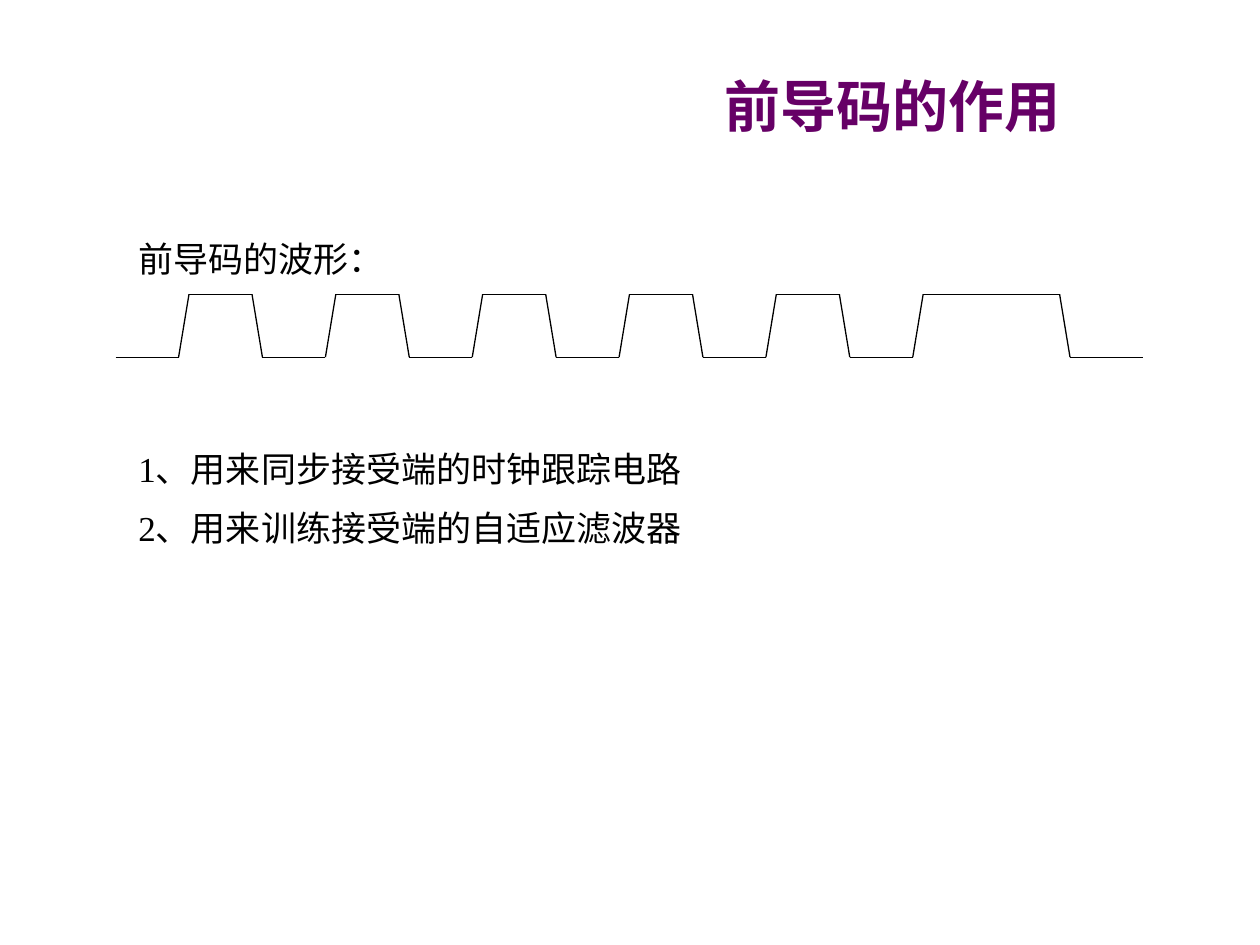
from itertools import pairwise

from lxml import etree
from pptx import Presentation
from pptx.dml.color import RGBColor as RGB
from pptx.enum.shapes import MSO_CONNECTOR as CONN
from pptx.enum.text import MSO_ANCHOR as ANCHOR, PP_ALIGN as ALIGN
from pptx.oxml.ns import qn
from pptx.util import Cm, Pt

COLORS = {"title": "660066", "text": "000000", "line": "000000", "paper": "FFFFFF"}
FONT = "Times New Roman"


def format_run(r, size, color, bold=False):
    r.font.name = FONT
    r.font.size = Pt(size)
    r.font.bold = bold
    r.font.color.rgb = RGB.from_string(COLORS[color])


def add_text(left, top, width, height, lines, wrap):
    tf = s.shapes.add_textbox(Cm(left), Cm(top), Cm(width), Cm(height)).text_frame
    tf.word_wrap = wrap
    tf.text = "\n".join(lines)
    for i, p in enumerate(tf.paragraphs):
        p.space_before = Pt(10 if i else 0)
        format_run(p.runs[0], 20, "text")


prs = Presentation()
prs.slide_width, prs.slide_height = Cm(25.4), Cm(19.05)
s = prs.slides.add_slide(prs.slide_layouts[5])

# Title
title = s.shapes.title
title.left, title.top, title.width, title.height = Cm(12.28), Cm(1.27), Cm(11.43), Cm(1.69)
title.fill.solid()
title.fill.fore_color.rgb = RGB.from_string(COLORS["paper"])
tf = title.text_frame
tf.text = "前导码的作用"
tf.vertical_anchor = ANCHOR.MIDDLE
tf.paragraphs[0].alignment = ALIGN.CENTER
format_run(tf.paragraphs[0].runs[0], 32, "title", bold=True)

# Numbered uses
add_text(2.54, 8.89, 15.03, 2.36,
         ["1、用来同步接受端的时钟跟踪电路", "2、用来训练接受端的自适应滤波器"], True)

# Waveform: five equal pulses, then one long pulse
HIGH, LOW = 5.93, 7.2
FLAT, LONG_FLAT, SLOPE = 1.27, 1.48, 0.21
pulse = [(FLAT, LOW), (SLOPE, HIGH), (FLAT, HIGH), (SLOPE, LOW)]
last_pulse = [(FLAT, LOW), (SLOPE, HIGH), (LONG_FLAT, HIGH), (FLAT, HIGH),
              (SLOPE, LOW), (LONG_FLAT, LOW)]
points = [(2.33, LOW)]
for dx, y in pulse * 5 + last_pulse:
    points.append((points[-1][0] + dx, y))

for (x1, y1), (x2, y2) in pairwise(points):
    line = s.shapes.add_connector(CONN.STRAIGHT, Cm(x1), Cm(y1), Cm(x2), Cm(y2))
    line.line.color.rgb = RGB.from_string(COLORS["line"])
    line.line.width = Pt(0.75)
    etree.SubElement(line._element.spPr, qn("a:effectLst"))

# Waveform label
add_text(2.54, 4.66, 5.28, 1.09, ["前导码的波形："], False)

prs.save("out.pptx")
